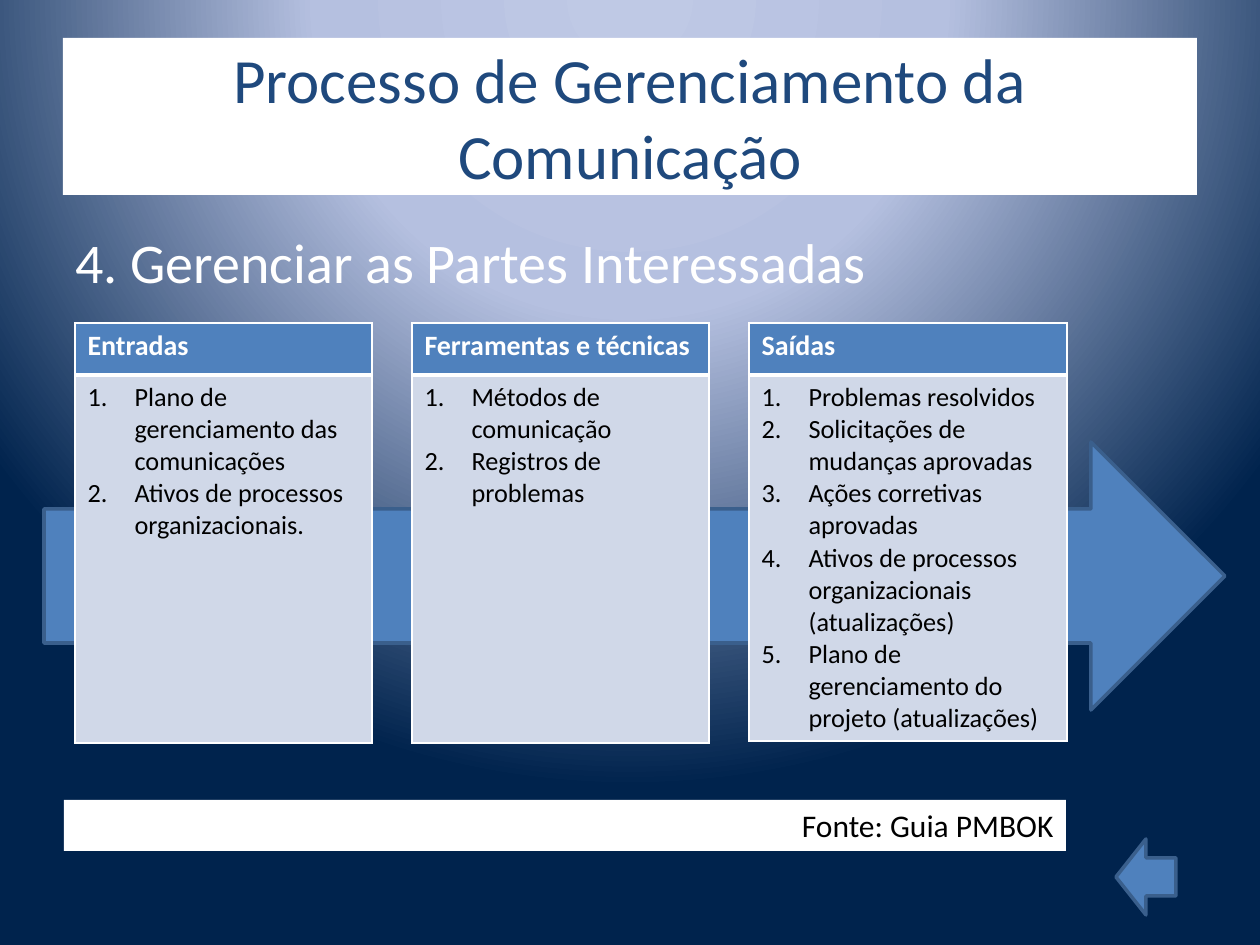
from dataclasses import dataclass
from typing import NamedTuple

from lxml import etree
from pptx import Presentation
from pptx import oxml
from pptx import util as u
from pptx.dml.color import RGBColor
from pptx.enum import shapes, text
from pptx.oxml import ns

FONT = "Calibri"
WHITE, BLACK, NAVY = "FFFFFF", "000000", "1F497D"
BLUE, EDGE, PALE = "4F81BD", "3A5F8C", "D0D8E8"
GLOW = ((0, "BFC9E5"), (40, "B5C0E0"), (100, "00234D"))
TABLE_TOP, HEADER_HEIGHT, NUMBER_INDENT = 323, 52, 47


class Area(NamedTuple):
    left: int
    top: int
    width: int
    height: int


class Style(NamedTuple):
    size: int
    color: str
    bold: bool = False


@dataclass
class Column:
    heading: str
    items: list[str]
    left: int
    width: int
    height: int


COLUMNS = [
    Column("Entradas", ["Plano de gerenciamento das comunicações",
                        "Ativos de processos organizacionais."], 75, 297, 420),
    Column("Ferramentas e técnicas", ["Métodos de comunicação",
                                      "Registros de problemas"], 412, 297, 420),
    Column("Saídas", ["Problemas resolvidos",
                      "Solicitações de mudanças aprovadas",
                      "Ações corretivas aprovadas",
                      "Ativos de processos organizacionais (atualizações)",
                      "Plano de gerenciamento do projeto (atualizações)"], 749, 318, 418),
]


def px(length: int) -> u.Emu:
    return u.Emu(round(length * 914400 / 126))


def rgb(color: str) -> RGBColor:
    return RGBColor.from_string(color)


def add_background(page) -> None:
    stops = "".join(f'<a:gs pos="{place * 1000}"><a:srgbClr val="{color}"/></a:gs>'
                    for place, color in GLOW)
    background = oxml.parse_xml(
        f'<p:bg {ns.nsdecls("p", "a")}><p:bgPr><a:gradFill rotWithShape="1">'
        f'<a:gsLst>{stops}</a:gsLst><a:path path="circle">'
        '<a:fillToRect l="50000" t="-80000" r="50000" b="180000"/></a:path>'
        '</a:gradFill><a:effectLst/></p:bgPr></p:bg>')
    page.element.cSld.insert(0, background)


def write(para, words: str, style: Style) -> None:
    span = para.add_run()
    span.text = words
    span.font.name = FONT
    span.font.size = u.Pt(style.size)
    span.font.bold = style.bold
    span.font.color.rgb = rgb(style.color)


def add_arrow(page, kind: shapes.MSO_SHAPE, area: Area) -> None:
    arrow = page.shapes.add_shape(kind, *map(px, area))
    arrow.shadow.inherit = False
    arrow.fill.solid()
    arrow.fill.fore_color.rgb = rgb(BLUE)
    arrow.line.color.rgb = rgb(EDGE)
    arrow.line.width = u.Pt(2)


def add_label(page, area: Area, words: str, style: Style, align: text.PP_ALIGN,
              anchor: text.MSO_ANCHOR, fill: str | None = None) -> None:
    box = page.shapes.add_textbox(*map(px, area))
    if fill:
        box.fill.solid()
        box.fill.fore_color.rgb = rgb(fill)
    frame = box.text_frame
    frame.word_wrap = True
    frame.vertical_anchor = anchor
    para = frame.paragraphs[0]
    para.alignment = align
    write(para, words, style)


def number(para) -> None:
    properties = para._p.get_or_add_pPr()
    properties.set("marL", str(px(NUMBER_INDENT)))
    properties.set("indent", str(-px(NUMBER_INDENT)))
    bullet = etree.SubElement(properties, ns.qn("a:buAutoNum"))
    bullet.set("type", "arabicPeriod")


def style_cell(cell, fill: str, top: int, bottom: int) -> None:
    properties = cell._tc.get_or_add_tcPr()
    for side, points in (("L", 1), ("R", 1), ("T", top), ("B", bottom)):
        border = etree.SubElement(properties, ns.qn(f"a:ln{side}"), w=str(u.Pt(points)))
        solid = etree.SubElement(border, ns.qn("a:solidFill"))
        etree.SubElement(solid, ns.qn("a:srgbClr"), val=WHITE)
    cell.fill.solid()
    cell.fill.fore_color.rgb = rgb(fill)


def add_column(page, column: Column) -> None:
    area = Area(column.left, TABLE_TOP, column.width, column.height)
    table = page.shapes.add_table(2, 1, *map(px, area)).table
    table.rows[0].height = px(HEADER_HEIGHT)
    table.rows[1].height = px(column.height - HEADER_HEIGHT)
    header, body = table.cell(0, 0), table.cell(1, 0)
    style_cell(header, BLUE, 1, 3)
    style_cell(body, PALE, 3, 1)
    write(header.text_frame.paragraphs[0], column.heading, Style(16, WHITE, True))
    frame = body.text_frame
    for index, item in enumerate(column.items):
        para = frame.add_paragraph() if index else frame.paragraphs[0]
        number(para)
        write(para, item, Style(15, BLACK))


def main() -> None:
    """Build the stakeholder management slide and save it."""
    deck = Presentation()
    deck.slide_width, deck.slide_height = px(1260), px(945)
    page = deck.slides.add_slide(deck.slide_layouts[6])
    add_background(page)
    add_label(page, Area(63, 38, 1134, 157), "Processo de Gerenciamento da Comunicação",
              Style(36, NAVY), text.PP_ALIGN.CENTER, text.MSO_ANCHOR.MIDDLE, WHITE)
    add_label(page, Area(63, 221, 1134, 83), "4. Gerenciar as Partes Interessadas",
              Style(32, WHITE), text.PP_ALIGN.LEFT, text.MSO_ANCHOR.TOP)
    add_arrow(page, shapes.MSO_SHAPE.RIGHT_ARROW, Area(44, 442, 1181, 268))
    for column in COLUMNS:
        add_column(page, column)
    add_label(page, Area(64, 800, 1002, 51), "Fonte: Guia PMBOK",
              Style(18, BLACK), text.PP_ALIGN.RIGHT, text.MSO_ANCHOR.TOP, WHITE)
    add_arrow(page, shapes.MSO_SHAPE.LEFT_ARROW, Area(1116, 839, 60, 76))
    deck.save("out.pptx")


if __name__ == "__main__":
    main()
